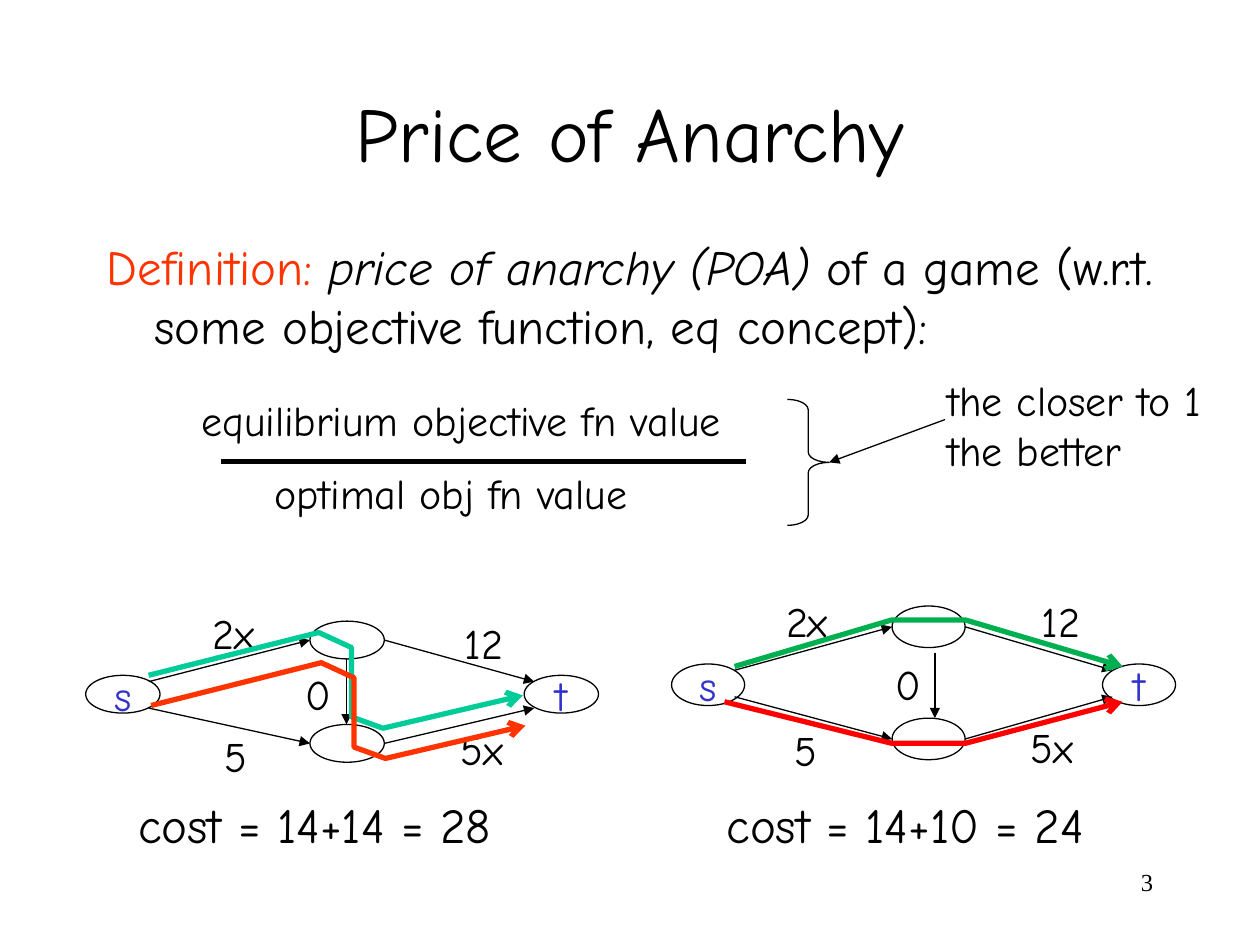
from lxml.etree import SubElement as Sub
from pptx import Presentation
from pptx.dml.color import RGBColor as Rgb
from pptx.enum.shapes import MSO_CONNECTOR as Conn, MSO_SHAPE as Geo
from pptx.enum.text import MSO_ANCHOR as Anchor, PP_ALIGN as Align
from pptx.oxml.ns import qn
from pptx.util import Inches, Pt

HUES = {
    "ink": "000000", "paper": "FFFFFF", "node": "3333CC", "red": "FF3300",
    "teal": "00CC99", "green": "00B050", "bright": "FF0000",
}


class Board:
    font = "Comic Neue"
    thin = 0.75
    thick = 3

    def __init__(self, slide):
        self.slide = slide
        self.shapes = slide.shapes

    def hue(self, name):
        return Rgb.from_string(HUES[name])

    def run(self, para, text, size, hue="ink", font=None, slant=False):
        run = para.add_run()
        run.text = text
        run.font.size = Pt(size)
        run.font.name = font or self.font
        run.font.italic = slant
        run.font.color.rgb = self.hue(hue)

    def text(self, box, lines, size=24, align=Align.LEFT, anchor=Anchor.TOP,
             wrap=True, font=None):
        frame = self.shapes.add_textbox(*map(Inches, box)).text_frame
        frame.word_wrap = wrap
        frame.vertical_anchor = anchor
        for i, line in enumerate(lines):
            para = frame.add_paragraph() if i else frame.paragraphs[0]
            para.alignment = align
            for text, style in line:
                self.run(para, text, size, font=font, **style)
        return frame

    def label(self, box, *lines, **style):
        return self.text(box, [[(line, {})] for line in lines], **style)

    def stroke(self, shape, hue, width, head=None):
        shape.line.color.rgb = self.hue(hue)
        shape.line.width = Pt(width)
        if head:
            Sub(shape.line._get_or_add_ln(), qn("a:tailEnd"), type=head)

    def line(self, start, end, width=thin, head="triangle"):
        link = self.shapes.add_connector(
            Conn.STRAIGHT, *map(Inches, (*start, *end)))
        self.stroke(link, "ink", width, head)
        Sub(link._element.spPr, qn("a:effectLst"))

    def route(self, spots, hue):
        spots = [(Inches(x), Inches(y)) for x, y in spots]
        pen = self.shapes.build_freeform(*spots[0])
        pen.add_line_segments(spots[1:], close=False)
        shape = pen.convert_to_shape()
        shape.shadow.inherit = False
        shape.fill.background()
        self.stroke(shape, hue, self.thick, "arrow")

    def brace(self, box):
        shape = self.shapes.add_shape(Geo.RIGHT_BRACE, *map(Inches, box))
        shape.shadow.inherit = False
        shape.adjustments[0] = 0.25
        shape.adjustments[1] = 0.5
        shape.fill.background()
        self.stroke(shape, "ink", self.thin)

    def node(self, spot, size, name=""):
        shape = self.shapes.add_shape(Geo.OVAL, *map(Inches, (*spot, *size)))
        shape.shadow.inherit = False
        shape.fill.solid()
        shape.fill.fore_color.rgb = self.hue("paper")
        self.stroke(shape, "ink", self.thin)
        if name:
            frame = shape.text_frame
            frame.word_wrap = False
            frame.vertical_anchor = Anchor.MIDDLE
            para = frame.paragraphs[0]
            para.alignment = Align.CENTER
            self.run(para, name, 24, "node")

    def graph(self, size, ends, mids, stem, tags, routes):
        (left, high), (right, _) = ends
        wide, tall = size
        for spot, name in zip(ends, "st"):
            self.node(spot, size, name)
        for spot in mids:
            self.node(spot, size)
        for (x, y), drop in zip(mids, (0.05, 0.26)):
            level = y + tall / 2
            self.line((left + 0.5, high + drop), (x, level))
            self.line((x + wide, level), (right + 0.08, high + drop))
        base = mids[1][1]
        self.line((stem, base - 0.52), (stem, base))
        for name, (x, y) in tags.items():
            self.label((x, y, 0.2 + 0.2 * len(name), 0.51), name, wrap=False)
        for hue, spots in routes.items():
            self.route(spots, hue)


def main():
    deck = Presentation()
    deck.slide_width, deck.slide_height = Inches(10), Inches(7.5)
    board = Board(deck.slides.add_slide(deck.slide_layouts[6]))

    board.label((7.17, 6.83, 2.08, 0.5), "3", size=14, align=Align.RIGHT,
                font="Times New Roman")
    board.label((0.75, 0.42, 8.5, 1.25), "Price of Anarchy", size=44,
                align=Align.CENTER, anchor=Anchor.MIDDLE)
    body = board.text((0.75, 1.83, 8.75, 4.5), [[
        ("Definition: ", {"hue": "red"}),
        ("price of anarchy (POA) ", {"slant": True}),
        ("of a game (w.r.t. some objective function, eq concept):", {}),
    ]], size=28)
    para = body.paragraphs[0]
    para.space_before = Pt(5.6)
    props = para._p.get_or_add_pPr()
    props.set("marL", str(Inches(0.38)))
    props.set("indent", str(Inches(-0.38)))

    board.label((1.5, 3.08, 4.83, 0.51), "equilibrium objective fn value")
    board.line((1.75, 3.66), (5.92, 3.66), board.thick, None)
    board.label((2.08, 3.66, 4.33, 0.5), "optimal obj fn value")
    board.brace((6.25, 3.17, 0.33, 1))
    board.line((7.5, 3.33), (6.58, 3.67))
    board.label((7.42, 2.92, 2.83, 0.9), "the closer to 1", "the better")

    board.graph(
        (0.58, 0.33), [(5.33, 5.27), (8.75, 5.27)],
        [(7.08, 4.81), (7.08, 5.7)], 7.42,
        {"2x": (6.14, 4.68), "12": (8.17, 4.68), "0": (7.01, 5.18),
         "5": (6.21, 5.7), "5x": (8.08, 5.68)},
        {"green": [(5.83, 5.29), (7.08, 4.92), (7.66, 4.92), (8.91, 5.29)],
         "bright": [(5.75, 5.57), (7.08, 5.9), (7.66, 5.9), (8.91, 5.57)]})
    bend = [(1.18, 5.36), (2.53, 5.02), (2.79, 5.14),
            (2.79, 5.69), (3.04, 5.78), (4.15, 5.52)]
    board.graph(
        (0.59, 0.3), [(0.68, 5.36), (4.16, 5.36)],
        [(2.46, 4.93), (2.46, 5.75)], 2.75,
        {"2x": (1.59, 4.77), "12": (3.59, 4.85), "0": (2.33, 5.26),
         "5": (1.68, 5.75), "5x": (3.56, 5.69)},
        {"teal": bend, "red": [(x + 0.02, y + 0.24) for x, y in bend]})
    board.label((1, 6.26, 3.42, 0.57), "cost = 14+14 = 28", size=28)
    board.label((5.67, 6.26, 3.42, 0.57), "cost = 14+10 = 24", size=28)

    deck.save("out.pptx")


if __name__ == "__main__":
    main()
